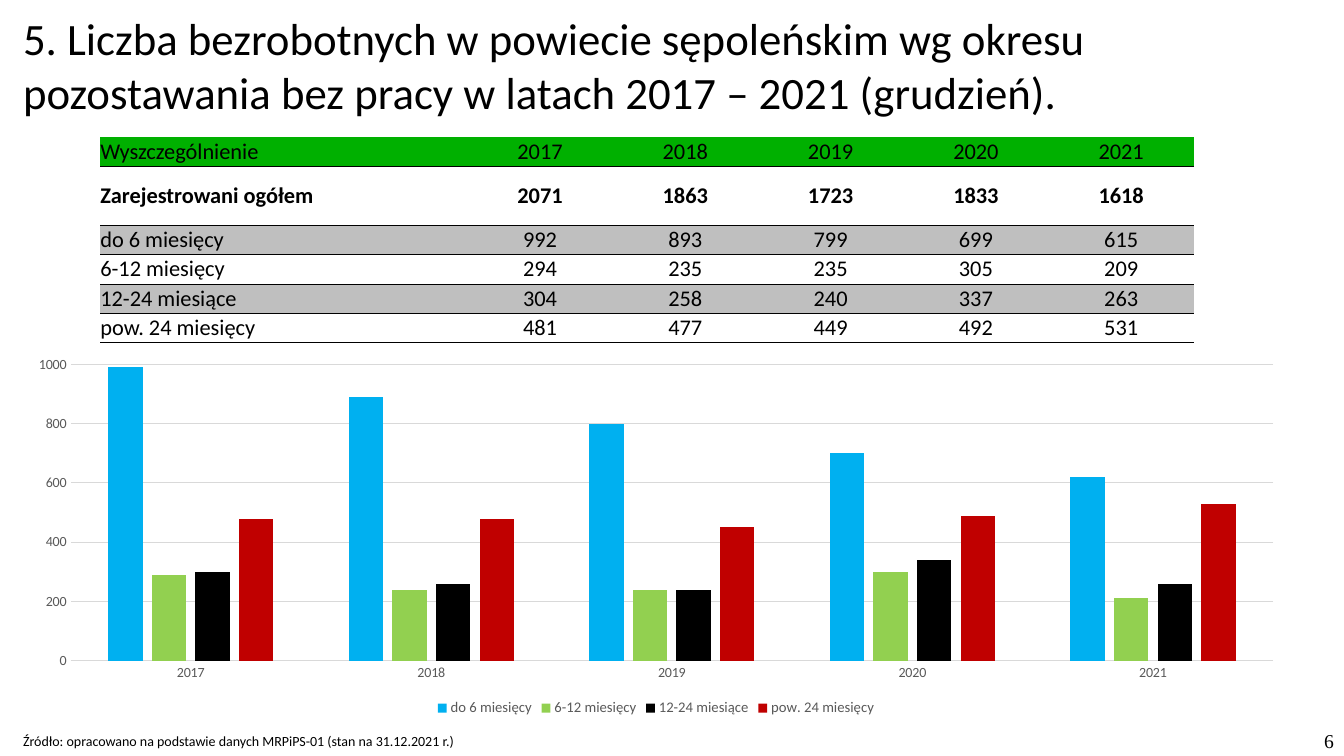
"""Build the slide on unemployment duration in Sępólno county."""
from dataclasses import dataclass

from pptx import Presentation
from pptx.chart.data import CategoryChartData
from pptx.dml.color import RGBColor
from pptx.enum.chart import XL_CHART_TYPE, XL_LEGEND_POSITION, XL_TICK_MARK
from pptx.enum.text import MSO_ANCHOR, MSO_AUTO_SIZE, PP_ALIGN
from pptx.oxml import parse_xml
from pptx.oxml.ns import nsdecls, qn
from pptx.util import Pt


@dataclass(frozen=True)
class Theme:
    """Colours, fonts and type sizes of the slide."""
    ink: str = "000000"
    header: str = "00B000"
    band: str = "BFBFBF"
    axis_text: str = "595959"
    grid: str = "D9D9D9"
    series: tuple = ("00B0F0", "92D050", "000000", "C00000")
    sans: str = "Calibri"
    serif: str = "Times New Roman"
    title_size: float = 32
    table_size: float = 16
    number_size: float = 14
    legend_size: float = 10.5
    small_size: float = 10


THEME = Theme()
PLAIN_TABLE_STYLE = "{2D5ABB26-0587-4C30-8999-92F81FD0307C}"
YEARS = ["2017", "2018", "2019", "2020", "2021"]
TOTALS = [2071, 1863, 1723, 1833, 1618]
DURATIONS = {
    "do 6 miesięcy": [992, 893, 799, 699, 615],
    "6-12 miesięcy": [294, 235, 235, 305, 209],
    "12-24 miesiące": [304, 258, 240, 337, 263],
    "pow. 24 miesięcy": [481, 477, 449, 492, 531],
}


def style_font(font, size, color=THEME.ink, name=THEME.sans, bold=False):
    """Set the face, size, colour and weight of a font."""
    font.name = name
    font.size = Pt(size)
    font.bold = bold
    font.color.rgb = RGBColor.from_string(color)


def add_text(page, text, bounds, size, name=THEME.sans, align=PP_ALIGN.LEFT,
             auto_size=MSO_AUTO_SIZE.SHAPE_TO_FIT_TEXT):
    """Add a wrapped text box with one paragraph."""
    box = page.shapes.add_textbox(*map(Pt, bounds))
    frame = box.text_frame
    frame.word_wrap = True
    frame.auto_size = auto_size
    para = frame.paragraphs[0]
    para.text = text
    para.alignment = align
    style_font(para.font, size, name=name)


def rule_below(cell):
    """Draw a thin line along the bottom of a table cell."""
    line = parse_xml(f'<a:lnB {nsdecls("a")} w="{Pt(0.5)}"><a:solidFill>'
                     f'<a:srgbClr val="{THEME.ink}"/></a:solidFill></a:lnB>')
    cell._tc.get_or_add_tcPr().insert(0, line)


def fill_cell(cell, text, align, fill, bold):
    """Write and style one table cell."""
    cell.margin_left = cell.margin_right = 0
    cell.margin_top = cell.margin_bottom = 0
    cell.vertical_anchor = MSO_ANCHOR.MIDDLE
    para = cell.text_frame.paragraphs[0]
    para.text = text
    para.alignment = align
    style_font(para.font, THEME.table_size, bold=bold)
    if fill:
        cell.fill.solid()
        cell.fill.fore_color.rgb = RGBColor.from_string(fill)
    else:
        cell.fill.background()
    rule_below(cell)


def add_duration_table(page, bounds, label_width, row_height):
    """Add the table of totals and durations by year."""
    rows = [["Wyszczególnienie", *YEARS], ["Zarejestrowani ogółem", *TOTALS]]
    rows += [[label, *counts] for label, counts in DURATIONS.items()]
    frame = page.shapes.add_table(len(rows), len(rows[0]), *map(Pt, bounds))
    table = frame.table
    table.first_row = table.horz_banding = False
    style_id = next(table._tbl.iter(qn("a:tableStyleId")))
    style_id.text = PLAIN_TABLE_STYLE
    year_width = (bounds[2] - label_width) / len(YEARS)
    for index, column in enumerate(table.columns):
        column.width = Pt(year_width if index else label_width)
    for index, values in enumerate(rows):
        is_total = index == 1
        table.rows[index].height = Pt(row_height * (2 if is_total else 1))
        fill = THEME.header if index == 0 else None if index % 2 else THEME.band
        for position, value in enumerate(values):
            align = PP_ALIGN.CENTER if position else PP_ALIGN.LEFT
            fill_cell(table.cell(index, position), str(value), align, fill, is_total)


def style_line(line):
    """Give a chart line the light grid look."""
    line.color.rgb = RGBColor.from_string(THEME.grid)
    line.width = Pt(0.75)


def style_axes(chart):
    """Style both axes and the gridlines."""
    for axis in (chart.category_axis, chart.value_axis):
        axis.major_tick_mark = axis.minor_tick_mark = XL_TICK_MARK.NONE
        style_font(axis.tick_labels.font, THEME.small_size, THEME.axis_text)
    style_line(chart.category_axis.format.line)
    values = chart.value_axis
    values.format.line.fill.background()
    values.minimum_scale, values.maximum_scale, values.major_unit = 0, 1000, 200
    values.has_major_gridlines = True
    style_line(values.major_gridlines.format.line)


def add_duration_chart(page, bounds):
    """Add the clustered columns of durations, to the nearest ten, by year."""
    data = CategoryChartData()
    data.categories = YEARS
    for label, counts in DURATIONS.items():
        data.add_series(label, [round(count, -1) for count in counts])
    chart = page.shapes.add_chart(
        XL_CHART_TYPE.COLUMN_CLUSTERED, *map(Pt, bounds), data).chart
    style_font(chart.font, THEME.small_size, name=THEME.serif)
    chart.has_title = False
    plot = chart.plots[0]
    plot.gap_width, plot.overlap = 219, -27
    plot.vary_by_categories = False
    for series, color in zip(plot.series, THEME.series):
        series.format.fill.solid()
        series.format.fill.fore_color.rgb = RGBColor.from_string(color)
    style_axes(chart)
    chart.has_legend = True
    chart.legend.position = XL_LEGEND_POSITION.BOTTOM
    chart.legend.include_in_layout = False
    style_font(chart.legend.font, THEME.legend_size, THEME.axis_text)


def main():
    """Build and save the deck."""
    deck = Presentation()
    deck.slide_width, deck.slide_height = Pt(960), Pt(540)
    page = deck.slides.add_slide(deck.slide_layouts[6])
    add_text(page, "5. Liczba bezrobotnych w powiecie sępoleńskim wg okresu "
             "pozostawania bez pracy w latach 2017 – 2021 (grudzień).",
             (9.4, 4.3, 941, 85), THEME.title_size)
    add_duration_chart(page, (9.4, 249.4, 918.4, 265.7))
    add_text(page, "Źródło: opracowano na podstawie danych MRPiPS-01 "
             "(stan na 31.12.2021 r.)", (9.4, 519.4, 357.1, 28.8),
             THEME.small_size)
    add_duration_table(page, (71.7, 97.9, 781.2, 147), 262.2, 21)
    add_text(page, "6", (735.8, 517, 224.2, 37.4), THEME.number_size,
             THEME.serif, PP_ALIGN.RIGHT, MSO_AUTO_SIZE.NONE)
    deck.save("out.pptx")


if __name__ == "__main__":
    main()
